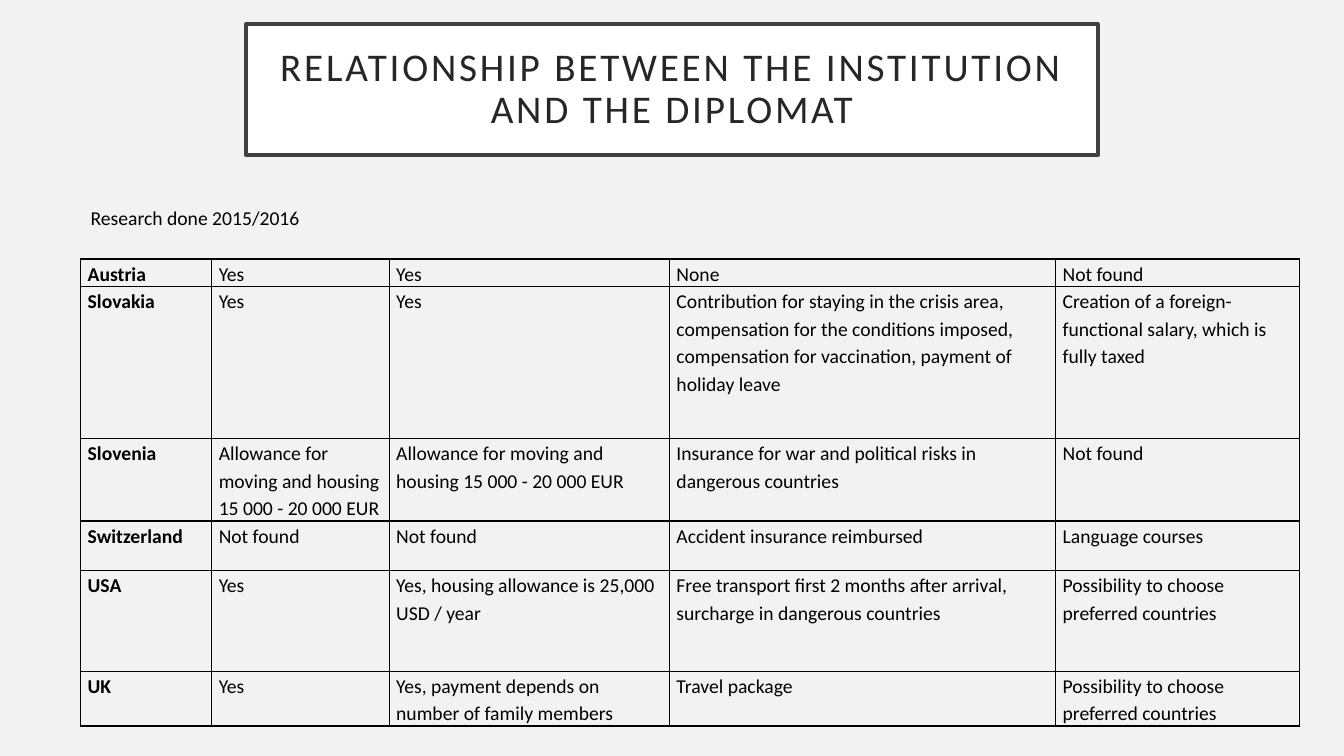
from lxml.etree import SubElement
from pptx import Presentation
from pptx.dml.color import RGBColor
from pptx.enum.shapes import MSO_SHAPE
from pptx.enum.text import MSO_ANCHOR, PP_ALIGN
from pptx.oxml.ns import qn
from pptx.util import Inches, Pt

COLORS = {
    "background": "F2F2F2",
    "title_fill": "FFFFFF",
    "title_line": "404040",
    "title_text": "262626",
    "text": "000000",
    "border": "000000",
}


def style_font(font, size, color, bold=False):
    font.name = "Calibri"
    font.size = Pt(size)
    font.bold = bold
    font.color.rgb = RGBColor.from_string(COLORS[color])


def add_borders(cell):
    properties = cell._tc.get_or_add_tcPr()
    for index, side in enumerate(("lnL", "lnR", "lnT", "lnB")):
        line = SubElement(properties, qn(f"a:{side}"), w=str(Pt(1)))
        fill = SubElement(line, qn("a:solidFill"))
        SubElement(fill, qn("a:srgbClr"), val=COLORS["border"])
        properties.insert(index, line)


presentation = Presentation()
presentation.slide_width = Inches(13.33)
presentation.slide_height = Inches(7.5)
slide = presentation.slides.add_slide(presentation.slide_layouts[6])
slide.background.fill.solid()
slide.background.fill.fore_color.rgb = RGBColor.from_string(COLORS["background"])

title = slide.shapes.add_shape(
    MSO_SHAPE.RECTANGLE, Inches(2.44), Inches(0.24), Inches(8.45), Inches(1.3)
)
title.shadow.inherit = False
title.fill.solid()
title.fill.fore_color.rgb = RGBColor.from_string(COLORS["title_fill"])
title.line.color.rgb = RGBColor.from_string(COLORS["title_line"])
title.line.width = Pt(2.5)
frame = title.text_frame
frame.word_wrap = True
frame.vertical_anchor = MSO_ANCHOR.MIDDLE
frame.margin_left = frame.margin_right = Inches(0.2)
frame.margin_top = frame.margin_bottom = Inches(0.2)
paragraph = frame.paragraphs[0]
paragraph.alignment = PP_ALIGN.CENTER
paragraph.line_spacing = 0.9
run = paragraph.add_run()
run.text = "RELATIONSHIP BETWEEN THE INSTITUTION AND THE DIPLOMAT"
style_font(run.font, 28, "title_text")
run.font._element.set("spc", "200")

column_widths = [1.3, 1.76, 2.78, 3.83, 2.42]
row_heights = [0.24, 1.51, 0.75, 0.49, 1, 0.52]
moving_allowance = "Allowance for moving and housing 15 000 - 20 000 EUR"
preferred_countries = "Possibility to choose preferred countries"
countries = [
    ("Austria", "Yes", "Yes", "None", "Not found"),
    (
        "Slovakia",
        "Yes",
        "Yes",
        "Contribution for staying in the crisis area, compensation for the "
        "conditions imposed, compensation for vaccination, payment of holiday leave",
        "Creation of a foreign-functional salary, which is fully taxed",
    ),
    (
        "Slovenia",
        moving_allowance,
        moving_allowance,
        "Insurance for war and political risks in dangerous countries",
        "Not found",
    ),
    (
        "Switzerland",
        "Not found",
        "Not found",
        "Accident insurance reimbursed",
        "Language courses",
    ),
    (
        "USA",
        "Yes",
        "Yes, housing allowance is 25,000 USD / year",
        "Free transport first 2 months after arrival, surcharge in dangerous countries",
        preferred_countries,
    ),
    (
        "UK",
        "Yes",
        "Yes, payment depends on number of family members",
        "Travel package",
        preferred_countries,
    ),
]

table = slide.shapes.add_table(
    len(countries), len(column_widths),
    Inches(0.8), Inches(2.57), Inches(12.08), Inches(4.57),
).table
table.first_row = False
table.horz_banding = False
for column, width in zip(table.columns, column_widths):
    column.width = Inches(width)
for row, height, texts in zip(table.rows, row_heights, countries):
    row.height = Inches(height)
    for index, (cell, text) in enumerate(zip(row.cells, texts)):
        cell.text = text
        cell.margin_left = cell.margin_right = Inches(0.07)
        cell.margin_top = cell.margin_bottom = 0
        cell.fill.background()
        add_borders(cell)
        paragraph = cell.text_frame.paragraphs[0]
        paragraph.line_spacing = 1.15
        paragraph.space_after = Pt(10)
        style_font(paragraph.font, 14, "text", bold=index == 0)

research_note = slide.shapes.add_textbox(
    Inches(0.8), Inches(1.99), Inches(4.15), Inches(0.34)
)
research_note.text_frame.word_wrap = True
paragraph = research_note.text_frame.paragraphs[0]
paragraph.text = "Research done 2015/2016"
style_font(paragraph.font, 14, "text")

presentation.save("out.pptx")
